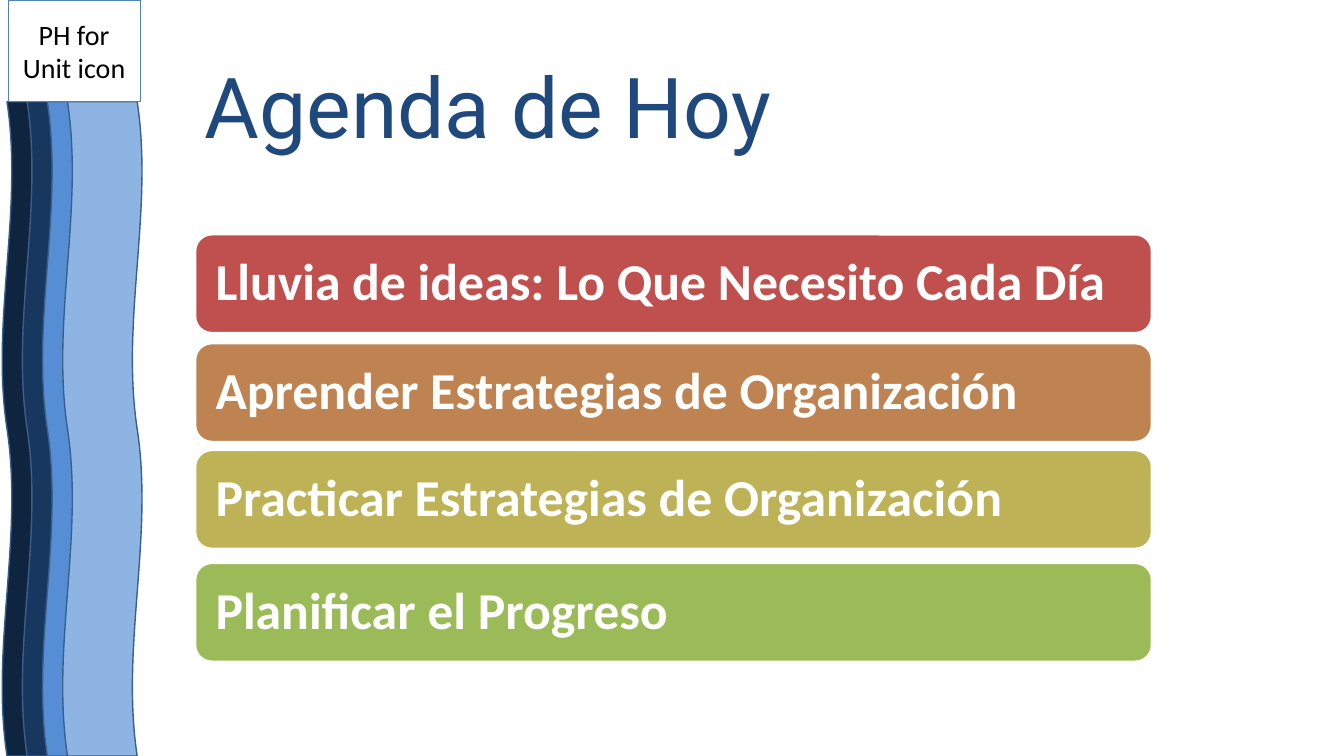
from dataclasses import dataclass

from pptx import Presentation
from pptx.dml.color import RGBColor
from pptx.enum.shapes import MSO_SHAPE as Preset
from pptx.enum.text import MSO_ANCHOR as Anchor, MSO_AUTO_SIZE as AutoSize, PP_ALIGN as Align
from pptx.util import Emu, Pt

EMU_PER_PX = 9144  # 100 px to the inch

WHITE = RGBColor(0xFF, 0xFF, 0xFF)
BLACK = RGBColor(0x00, 0x00, 0x00)
TITLE_BLUE = RGBColor(0x1F, 0x49, 0x7D)
WAVE_EDGE = RGBColor(0x3A, 0x5F, 0x8C)
ICON_EDGE = RGBColor(0x4F, 0x81, 0xBD)
WAVE_FILLS = (
    RGBColor(0x0F, 0x24, 0x3E),
    RGBColor(0x17, 0x37, 0x5E),
    RGBColor(0x55, 0x8E, 0xD5),
    RGBColor(0x8E, 0xB4, 0xE3),
)

WAVE_LEFT, WAVE_TOP, WAVE_LENGTH, WAVE_WIDTH, WAVE_STEP = -283, 386, 649, 79, 20
BAR_LEFT, BAR_WIDTH, BAR_HEIGHT, BAR_INSET = 194, 948, 97, 15


@dataclass(frozen=True)
class AgendaItem:
    text: str
    top: int
    fill: RGBColor


AGENDA = (
    AgendaItem("Lluvia de ideas: Lo Que Necesito Cada Día", 233, RGBColor(0xC0, 0x50, 0x4D)),
    AgendaItem("Aprender Estrategias de Organización", 341, RGBColor(0xBE, 0x83, 0x51)),
    AgendaItem("Practicar Estrategias de Organización", 447, RGBColor(0xBD, 0xB2, 0x55)),
    AgendaItem("Planificar el Progreso", 559, RGBColor(0x9B, 0xBB, 0x59)),
)


def px(length: int) -> Emu:
    return Emu(length * EMU_PER_PX)


def add_preset(page, preset, left: int, top: int, width: int, height: int,
               edge: RGBColor, edge_width: float, fill: RGBColor | None = None):
    shape = page.shapes.add_shape(preset, px(left), px(top), px(width), px(height))
    shape.shadow.inherit = False
    if fill is None:
        shape.fill.background()
    else:
        shape.fill.solid()
        shape.fill.fore_color.rgb = fill
    shape.line.color.rgb = edge
    shape.line.width = Pt(edge_width)
    return shape


def write(shape, text: str, size: int, color: RGBColor, font_name: str = "Calibri",
          bold: bool = False, align=Align.LEFT, line_spacing: float = 1.0) -> None:
    frame = shape.text_frame
    frame.text = text
    frame.word_wrap = True
    frame.auto_size = AutoSize.NONE
    frame.vertical_anchor = Anchor.MIDDLE
    para = frame.paragraphs[0]
    para.alignment = align
    para.line_spacing = line_spacing
    para.font.name = font_name
    para.font.size = Pt(size)
    para.font.bold = bold
    para.font.color.rgb = color


def add_agenda_bar(page, item: AgendaItem) -> None:
    bar = add_preset(page, Preset.ROUNDED_RECTANGLE, BAR_LEFT, item.top,
                     BAR_WIDTH, BAR_HEIGHT, WHITE, 1, item.fill)
    write(bar, item.text, 37, WHITE, bold=True, line_spacing=0.9)
    frame = bar.text_frame
    frame.margin_left = frame.margin_right = px(BAR_INSET)
    frame.margin_top = frame.margin_bottom = px(BAR_INSET)


def main() -> None:
    deck = Presentation()
    deck.slide_width, deck.slide_height = px(1333), px(750)
    page = deck.slides.add_slide(deck.slide_layouts[5])

    # Wavy side band
    for index, fill in enumerate(WAVE_FILLS):
        wave = add_preset(page, Preset.DOUBLE_WAVE, WAVE_LEFT + index * WAVE_STEP, WAVE_TOP,
                          WAVE_LENGTH, WAVE_WIDTH, WAVE_EDGE, 1, fill)
        wave.rotation = 270

    # Unit icon box
    icon_box = add_preset(page, Preset.RECTANGLE, 8, 0, 131, 101, ICON_EDGE, 0.75)
    write(icon_box, "PH for Unit icon", 20, BLACK, align=Align.CENTER)

    # Title
    title = page.shapes.title
    title.left, title.top, title.width, title.height = px(193), px(39), px(596), px(142)
    write(title, "Agenda de Hoy", 60, TITLE_BLUE, "Roboto", line_spacing=0.9)

    # Agenda bars
    for item in AGENDA:
        add_agenda_bar(page, item)

    deck.save("out.pptx")


if __name__ == "__main__":
    main()
